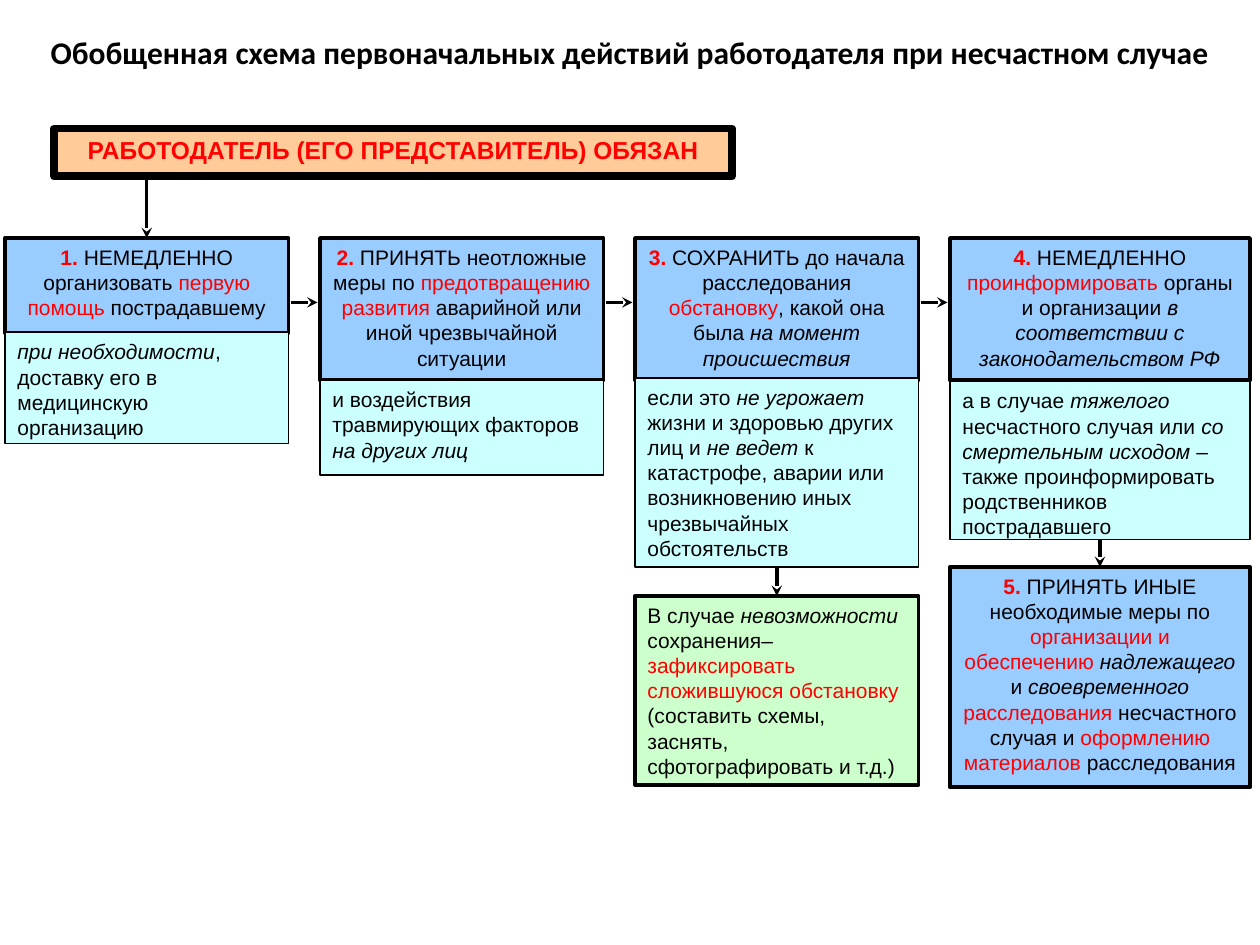
from lxml import etree
from pptx import Presentation
from pptx import util as u
from pptx.dml.color import RGBColor
from pptx.enum import shapes, text
from pptx.oxml.ns import qn

BLACK = RGBColor(0x00, 0x00, 0x00)
RED = RGBColor(0xFF, 0x00, 0x00)
BLUE = RGBColor(0x99, 0xCC, 0xFF)
CYAN = RGBColor(0xCC, 0xFF, 0xFF)
GREEN = RGBColor(0xCC, 0xFF, 0xCC)
ORANGE = RGBColor(0xFF, 0xCC, 0x99)
LEFT, CENTER = text.PP_ALIGN.LEFT, text.PP_ALIGN.CENTER

prs = Presentation()
prs.slide_width, prs.slide_height = u.Inches(10), u.Inches(7.5)
slide = prs.slides.add_slide(prs.slide_layouts[6])


def add_box(place, fill, border, align, runs, size=12):
    """Bordered box; run styles: r = red, b = bold, i = italic."""
    box = slide.shapes.add_shape(shapes.MSO_SHAPE.RECTANGLE, *map(u.Inches, place))
    box.shadow.inherit = False
    box.fill.solid()
    box.fill.fore_color.rgb = fill
    box.line.color.rgb = BLACK
    box.line.width = u.Pt(border)
    frame = box.text_frame
    frame.word_wrap = True
    frame.vertical_anchor = text.MSO_ANCHOR.TOP
    paragraph = frame.paragraphs[0]
    paragraph.alignment = align
    for words, style in runs:
        run = paragraph.add_run()
        run.text = words
        run.font.name = "Arial"
        run.font.size = u.Pt(size)
        run.font.bold = "b" in style
        run.font.italic = "i" in style
        run.font.color.rgb = RED if "r" in style else BLACK
    return box


def add_arrow(start, end, kind=shapes.MSO_CONNECTOR.STRAIGHT):
    arrow = slide.shapes.add_connector(kind, *map(u.Inches, start + end))
    arrow.line.color.rgb = BLACK
    arrow.line.width = u.Pt(2)
    etree.SubElement(arrow.line._get_or_add_ln(), qn("a:tailEnd"), type="stealth")
    etree.SubElement(arrow._element.spPr, qn("a:effectLst"))
    return arrow


# Title
title = slide.shapes.add_textbox(*map(u.Inches, (0.3, 0.21, 9.4, 0.71))).text_frame
title.word_wrap = False
title.text = "Обобщенная схема первоначальных действий работодателя при несчастном случае"
title.paragraphs[0].alignment = CENTER
title_font = title.paragraphs[0].runs[0].font
title_font.name, title_font.size, title_font.bold = "Calibri", u.Pt(18), True
title_font.color.rgb = BLACK

# Four duties, each with a detail box below: width, duty height, duty, detail top, detail height, detail
COLUMN_LEFT, COLUMN_PITCH, DUTY_TOP = 0.04, 2.5, 1.89
columns = [
    (2.25, 0.75,
     [("1.", "rb"), (" НЕМЕДЛЕННО организовать ", ""), ("первую помощь", "r"),
      (" пострадавшему", "")],
     2.64, 0.88,
     [("при необходимости", "i"), (", доставку его в медицинскую организацию", "")]),
    (2.25, 1.13,
     [("2.", "rb"), (" ПРИНЯТЬ неотложные меры по ", ""),
      ("предотвращению развития", "r"),
      (" аварийной или иной чрезвычайной ситуации", "")],
     3.02, 0.75,
     [("и воздействия травмирующих факторов ", ""), ("на других лиц", "i")]),
    (2.25, 1.13,
     [("3.", "rb"), (" СОХРАНИТЬ до начала расследования ", ""), ("обстановку", "r"),
      (", какой она была ", ""), ("на момент происшествия", "i")],
     3, 1.5,
     [("если это ", ""), ("не угрожает", "i"), (" жизни и здоровью других лиц и ", ""),
      ("не ведет", "i"),
      (" к катастрофе, аварии или возникновению иных чрезвычайных обстоятельств", "")]),
    (2.38, 1.13,
     [("4.", "rb"), (" НЕМЕДЛЕННО ", ""), ("проинформировать", "r"),
      (" органы и организации ", ""), ("в соответствии с законодательством РФ", "i")],
     3.03, 1.25,
     [("а в случае ", ""), ("тяжелого", "i"), (" несчастного случая или ", ""),
      ("со смертельным исходом", "i"),
      (" – также проинформировать родственников пострадавшего", "")]),
]
duties, details = [], []
for index, (width, duty_height, duty, detail_top, detail_height, detail) in enumerate(columns):
    left = COLUMN_LEFT + index * COLUMN_PITCH
    duties.append(add_box((left, DUTY_TOP, width, duty_height), BLUE, 2.25, CENTER, duty))
    details.append(add_box((left, detail_top, width, detail_height), CYAN, 0.75, LEFT, detail))
    if index:
        add_arrow((left - 0.23, 2.4), (left - 0.02, 2.4))

# Follow-up steps under the third and fourth columns
record_scene = add_box((5.04, 4.73, 2.25, 1.5), GREEN, 2, LEFT, [
    ("В случае ", ""), ("невозможности", "i"), (" сохранения– ", ""),
    ("зафиксировать сложившуюся обстановку", "r"),
    (" (составить схемы, заснять, сфотографировать и т.д.)", "")])
other_measures = add_box((7.54, 4.5, 2.38, 1.75), BLUE, 2.25, CENTER, [
    ("5.", "rb"), (" ПРИНЯТЬ ИНЫЕ необходимые меры по ", ""),
    ("организации и обеспечению ", "r"), ("надлежащего", "i"), (" и ", ""),
    ("своевременного ", "i"), ("расследования", "r"), (" несчастного случая и ", ""),
    ("оформлению материалов", "r"), (" расследования", "")])
for detail_box, follow_up in ((details[2], record_scene), (details[3], other_measures)):
    down_arrow = add_arrow((0, 0), (1, 1))
    down_arrow.begin_connect(detail_box, 2)
    down_arrow.end_connect(follow_up, 0)

# Elbow arrow from the banner to the first duty, single bend
elbow = add_arrow((1.38, 1.22), (1.16, 1.89), shapes.MSO_CONNECTOR.ELBOW)
elbow._element.spPr.find(qn("a:prstGeom")).set("prst", "bentConnector2")
elbow.end_connect(duties[0], 0)

# Banner, in front of the elbow's start
add_box((0.43, 1.02, 5.38, 0.38), ORANGE, 4.5, CENTER,
        [("РАБОТОДАТЕЛЬ (ЕГО ПРЕДСТАВИТЕЛЬ) ОБЯЗАН", "rb")], 14)

prs.save("out.pptx")
